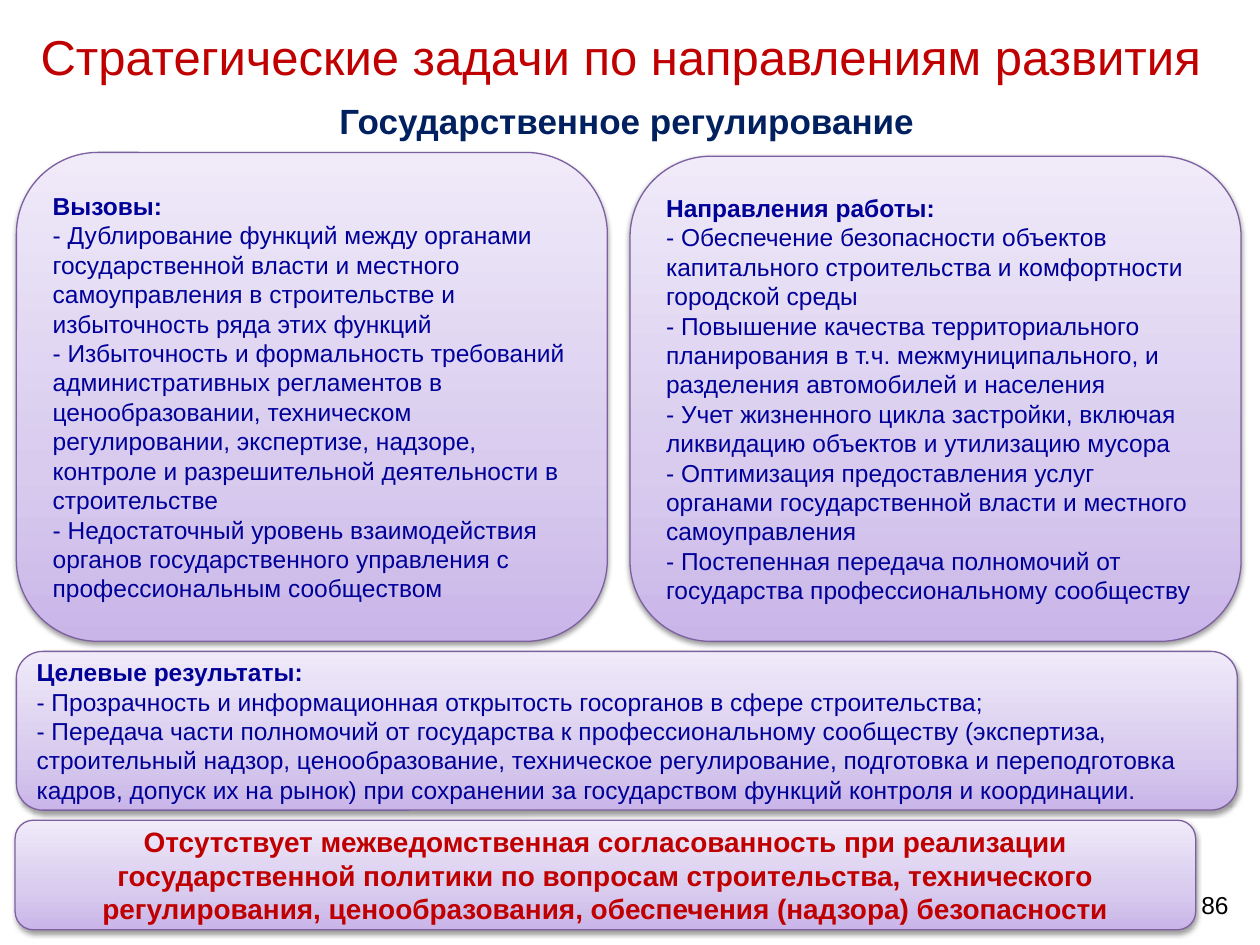
from lxml.etree import SubElement
from pptx import Presentation
from pptx.dml.color import RGBColor
from pptx.enum.shapes import MSO_SHAPE
from pptx.enum.text import MSO_ANCHOR, PP_ALIGN
from pptx.oxml.ns import qn
from pptx.util import Inches, Pt

COLORS = {
    "heading": "C00000",
    "subject": "002060",
    "body": "000099",
    "number": "000000",
    "outline": "7D60A0",
    "shadow": "000000",
}
GRADIENT = [(0, "C9B5E8"), (35, "D8CBEE"), (100, "F0EAF9")]

CHALLENGES = [
    "Вызовы:",
    "- Дублирование функций между органами государственной власти и местного "
    "самоуправления в строительстве и избыточность ряда этих функций",
    "- Избыточность и формальность требований административных регламентов в "
    "ценообразовании, техническом регулировании, экспертизе, надзоре, контроле "
    "и разрешительной деятельности в строительстве",
    "- Недостаточный уровень взаимодействия органов государственного управления "
    "с профессиональным сообществом",
]
DIRECTIONS = [
    "Направления работы:",
    "- Обеспечение безопасности объектов капитального строительства и "
    "комфортности городской среды",
    "- Повышение качества территориального планирования в т.ч. "
    "межмуниципального, и разделения автомобилей и населения",
    "- Учет жизненного цикла застройки, включая ликвидацию объектов и "
    "утилизацию мусора",
    "- Оптимизация предоставления услуг органами государственной власти и "
    "местного самоуправления",
    "- Постепенная передача полномочий от государства профессиональному "
    "сообществу",
]
RESULTS = [
    "Целевые результаты:",
    "- Прозрачность и информационная открытость госорганов в сфере строительства;",
    "- Передача части полномочий от государства к профессиональному сообществу "
    "(экспертиза, строительный надзор, ценообразование, техническое "
    "регулирование, подготовка и переподготовка кадров, допуск их на рынок) при "
    "сохранении за государством функций контроля и координации.",
]
CONCLUSION = (
    "Отсутствует межведомственная согласованность при реализации "
    "государственной политики по вопросам строительства, технического "
    "регулирования, ценообразования, обеспечения (надзора) безопасности"
)


def write_paragraph(paragraph, text, size, color, bold=False, align=PP_ALIGN.LEFT):
    """Add one formatted run to a paragraph."""
    paragraph.alignment = align
    run = paragraph.add_run()
    run.text = text
    run.font.name = "Arial"
    run.font.size = Pt(size)
    run.font.bold = bold
    run.font.color.rgb = RGBColor.from_string(COLORS[color])


def prepare_frame(shape):
    """Return the shape's text frame, wrapped and vertically centred."""
    frame = shape.text_frame
    frame.word_wrap = True
    frame.vertical_anchor = MSO_ANCHOR.MIDDLE
    return frame


def add_color(parent, color, alpha=None):
    """Append an RGB colour element, with optional opacity in percent."""
    element = SubElement(parent, qn("a:srgbClr"), val=color)
    if alpha is not None:
        SubElement(element, qn("a:alpha"), val=str(alpha * 1000))


def add_panel(slide, box):
    """Add a rounded gradient panel with a soft shadow and return its text frame."""
    panel = slide.shapes.add_shape(MSO_SHAPE.ROUNDED_RECTANGLE, *map(Inches, box))
    properties = panel.element.spPr
    gradient = SubElement(properties, qn("a:gradFill"), rotWithShape="1")
    stops = SubElement(gradient, qn("a:gsLst"))
    for position, color in GRADIENT:
        add_color(SubElement(stops, qn("a:gs"), pos=str(position * 1000)), color)
    SubElement(gradient, qn("a:lin"), ang=str(270 * 60000), scaled="0")
    panel.line.color.rgb = RGBColor.from_string(COLORS["outline"])
    panel.line.width = Pt(0.75)
    effects = SubElement(properties, qn("a:effectLst"))
    shadow = SubElement(
        effects, qn("a:outerShdw"), blurRad=str(Pt(3.1)), dist=str(Pt(1.6)),
        dir=str(90 * 60000), rotWithShape="0",
    )
    add_color(shadow, COLORS["shadow"], alpha=38)
    return prepare_frame(panel)


def add_list_panel(slide, box, lines):
    """Add a panel whose bold first line heads the remaining lines."""
    frame = add_panel(slide, box)
    for index, line in enumerate(lines):
        paragraph = frame.add_paragraph() if index else frame.paragraphs[0]
        write_paragraph(paragraph, line, 14, "body", bold=index == 0)


def add_conclusion(slide, box):
    """Add the panel with the closing statement."""
    frame = add_panel(slide, box)
    write_paragraph(frame.paragraphs[0], CONCLUSION, 16, "heading", True, PP_ALIGN.CENTER)


def add_label(slide, box, text, size, color, align):
    """Add a single-paragraph text box."""
    label = slide.shapes.add_textbox(*map(Inches, box))
    write_paragraph(prepare_frame(label).paragraphs[0], text, size, color, align=align)


def place_subject(slide, box):
    """Move and fill the title placeholder."""
    subject = slide.shapes.title
    subject.left, subject.top, subject.width, subject.height = map(Inches, box)
    write_paragraph(
        prepare_frame(subject).paragraphs[0],
        "Государственное регулирование", 20, "subject", True, PP_ALIGN.CENTER,
    )


def main():
    """Build the slide and save it."""
    presentation = Presentation()
    presentation.slide_width = Inches(10)
    presentation.slide_height = Inches(7.5)
    slide = presentation.slides.add_slide(presentation.slide_layouts[5])
    add_label(slide, (7.52, 6.98, 2.33, 0.4), "86", 14, "number", PP_ALIGN.RIGHT)
    place_subject(slide, (0.09, 0.7, 9.77, 0.52))
    add_list_panel(slide, (0.13, 1.21, 4.69, 3.88), CHALLENGES)
    add_list_panel(slide, (5, 1.24, 4.85, 3.85), DIRECTIONS)
    add_list_panel(slide, (0.13, 5.17, 9.69, 1.26), RESULTS)
    add_conclusion(slide, (0.12, 6.51, 9.37, 0.87))
    add_label(
        slide, (0.11, 0.03, 9.63, 0.83),
        "Стратегические задачи по направлениям развития", 28, "heading", PP_ALIGN.CENTER,
    )
    presentation.save("out.pptx")


if __name__ == "__main__":
    main()
